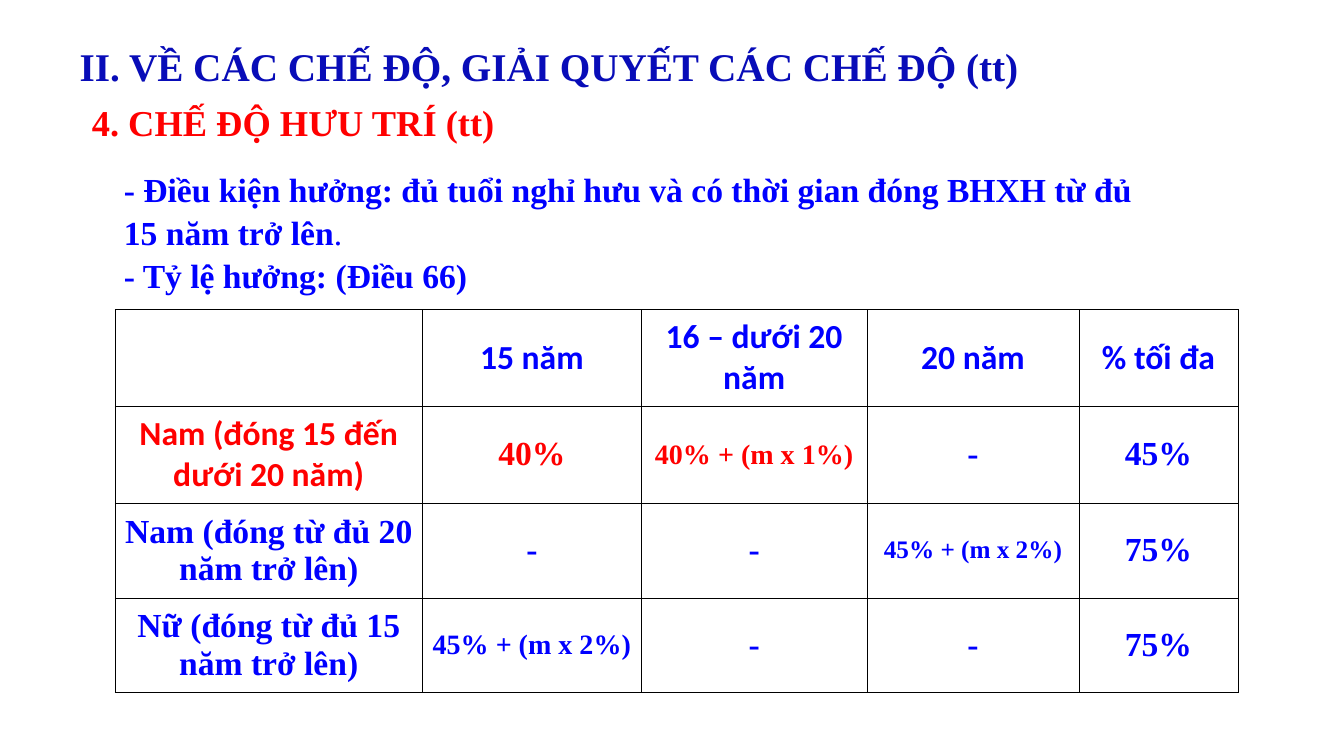
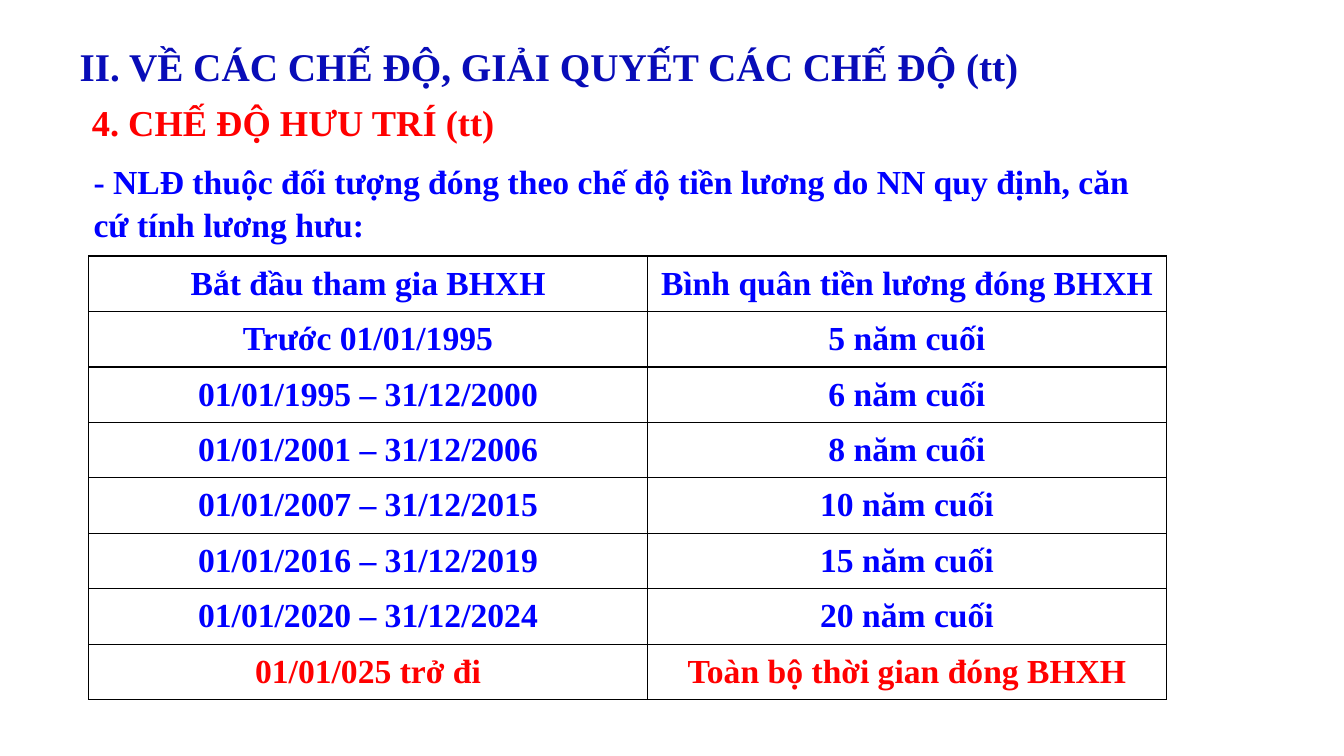
from dataclasses import dataclass
from typing import Any

from lxml.etree import SubElement
from pptx import Presentation
from pptx.dml.color import RGBColor
from pptx.enum.text import MSO_ANCHOR as Anchor, MSO_AUTO_SIZE as Fit, PP_ALIGN as Align
from pptx.oxml.ns import qn
from pptx.util import Inches, Pt

BLUE, RED, NAVY = "0000FF", "FF0000", "080CB8"
WHITE, BLACK = "FFFFFF", "000000"
SERIF, SANS = "Times New Roman", "Calibri"
TITLE = "II. VỀ CÁC CHẾ ĐỘ, GIẢI QUYẾT CÁC CHẾ ĐỘ (tt)"
TOPIC = "4. CHẾ ĐỘ HƯU TRÍ (tt)"


@dataclass(frozen=True)
class Run:
    text: str
    size: int = 24
    color: str = BLUE
    name: str = SERIF
    bold: bool = True


@dataclass(frozen=True)
class Grid:
    left: float
    top: float
    cols: list[float]
    rows: list[float]
    line: float
    cells: list[list[Run]]


def paint(target: Any, color: str) -> None:
    target.rgb = RGBColor.from_string(color)


def fill(target: Any, color: str) -> None:
    target.fill.solid()
    paint(target.fill.fore_color, color)


def write(para: Any, *runs: Run, **form: Any) -> None:
    for key, value in form.items():
        setattr(para, key, value)
    for item in runs:
        run = para.add_run()
        run.text = item.text
        look = {"size": Pt(item.size), "name": item.name, "bold": item.bold}
        for key, value in look.items():
            setattr(run.font, key, value)
        paint(run.font.color, item.color)


def pad(target: Any, side: float, end: float) -> None:
    """Set the inner margins: side is left and right, end is top and bottom."""
    for key, size in {"left": side, "right": side, "top": end, "bottom": end}.items():
        setattr(target, f"margin_{key}", Inches(size))


def add_text(slide: Any, box: tuple, paras: list[list[Run]], end: float = 0.05,
             **form: Any) -> None:
    frame = slide.shapes.add_textbox(*map(Inches, box)).text_frame
    frame.word_wrap = True
    pad(frame, 0.1, end)
    for num, runs in enumerate(paras):
        para = frame.add_paragraph() if num else frame.paragraphs[0]
        write(para, *runs, **form)


def edge(cell: Any, width: float) -> None:
    """Draw the four borders of a cell."""
    props = cell._tc.get_or_add_tcPr()
    for side in "LRTB":
        line = SubElement(props, qn(f"a:ln{side}"), w=str(Pt(width)))
        SubElement(SubElement(line, qn("a:solidFill")), qn("a:srgbClr"), val=BLACK)


def add_grid(slide: Any, grid: Grid) -> None:
    size = (grid.left, grid.top, sum(grid.cols), sum(grid.rows))
    table = slide.shapes.add_table(
        len(grid.rows), len(grid.cols), *map(Inches, size)).table
    table.first_row = table.horz_banding = False
    for col, width in zip(table.columns, grid.cols):
        col.width = Inches(width)
    for row, height, runs in zip(table.rows, grid.rows, grid.cells):
        row.height = Inches(height)
        for cell, run in zip(row.cells, runs):
            edge(cell, grid.line)
            fill(cell, WHITE)
            pad(cell, 0.1, 0.07)
            cell.vertical_anchor = Anchor.MIDDLE
            para = cell.text_frame.paragraphs[0]
            if run.text:
                write(para, run, alignment=Align.CENTER)


def add_slide(deck: Any) -> Any:
    """Add a slide with the shared title and topic."""
    slide = deck.slides.add_slide(deck.slide_layouts[5])
    title = slide.shapes.title
    box = {"left": 0.69, "top": 0.37, "width": 9.55, "height": 0.57}
    for key, value in box.items():
        setattr(title, key, Inches(value))
    fill(title, WHITE)
    frame = title.text_frame
    form = {"auto_size": Fit.NONE, "word_wrap": True, "vertical_anchor": Anchor.MIDDLE}
    for key, value in form.items():
        setattr(frame, key, value)
    pad(frame, 0.1, 0.05)
    write(frame.paragraphs[0], Run(TITLE, 28, NAVY), alignment=Align.LEFT)
    add_text(slide, (0.79, 0.94, 4.24, 0.54), [[Run(TOPIC, 26, RED)]],
             alignment=Align.CENTER)
    return slide


def add_rates(deck: Any) -> None:
    slide = add_slide(deck)
    add_text(slide, (1.13, 1.55, 10.44, 1.44), [
        [Run("- Điều kiện hưởng: đủ tuổi nghỉ hưu và có thời gian đóng BHXH "
             "từ đủ 15 năm trở lên"), Run(".", bold=False)],
        [Run("- Tỷ lệ hưởng: (Điều 66)")],
    ], end=0.1, line_spacing=1.07)
    heads = ["", "15 năm", "16 – dưới 20 năm", "20 năm", "% tối đa"]
    dash, full = Run("-"), Run("75%")
    add_grid(slide, Grid(
        1.14, 3.07, [3.05, 2.17, 2.24, 2.1, 1.58], [0.96, 0.96, 0.89, 0.89], 0.25, [
            [Run(text, name=SANS) for text in heads],
            [Run("Nam (đóng 15 đến dưới 20 năm)", color=RED, name=SANS),
             Run("40%", color=RED), Run("40% + (m x 1%)", 20, RED), dash, Run("45%")],
            [Run("Nam (đóng từ đủ 20 năm trở lên)"), dash, dash,
             Run("45% + (m x 2%)", 18), full],
            [Run("Nữ (đóng từ đủ 15 năm trở lên)"),
             Run("45% + (m x 2%)", 20), dash, dash, full],
        ]))


def add_bases(deck: Any) -> None:
    slide = add_slide(deck)
    add_text(slide, (0.83, 1.52, 10.73, 0.91), [
        [Run("- NLĐ thuộc đối tượng đóng theo chế độ tiền lương do NN quy định, "
             "căn cứ tính lương hưu:")],
    ], line_spacing=1.07)
    pairs = [
        ("Bắt đầu tham gia BHXH", "Bình quân tiền lương đóng BHXH"),
        ("Trước 01/01/1995", "5 năm cuối"),
        ("01/01/1995 – 31/12/2000", "6 năm cuối"),
        ("01/01/2001 – 31/12/2006", "8 năm cuối"),
        ("01/01/2007 – 31/12/2015", "10 năm cuối"),
        ("01/01/2016 – 31/12/2019", "15 năm cuối"),
        ("01/01/2020 – 31/12/2024", "20 năm cuối"),
        ("01/01/025 trở đi", "Toàn bộ thời gian đóng BHXH"),
    ]
    cells = [[Run(text, color=RED if pair is pairs[-1] else BLUE) for text in pair]
             for pair in pairs]
    add_grid(slide, Grid(0.88, 2.54, [5.54, 5.15], [0.55] * len(pairs), 1, cells))


def main() -> None:
    deck = Presentation()
    deck.slide_width, deck.slide_height = Inches(13.33), Inches(7.5)
    add_rates(deck)
    add_bases(deck)
    deck.save("out.pptx")


if __name__ == "__main__":
    main()
